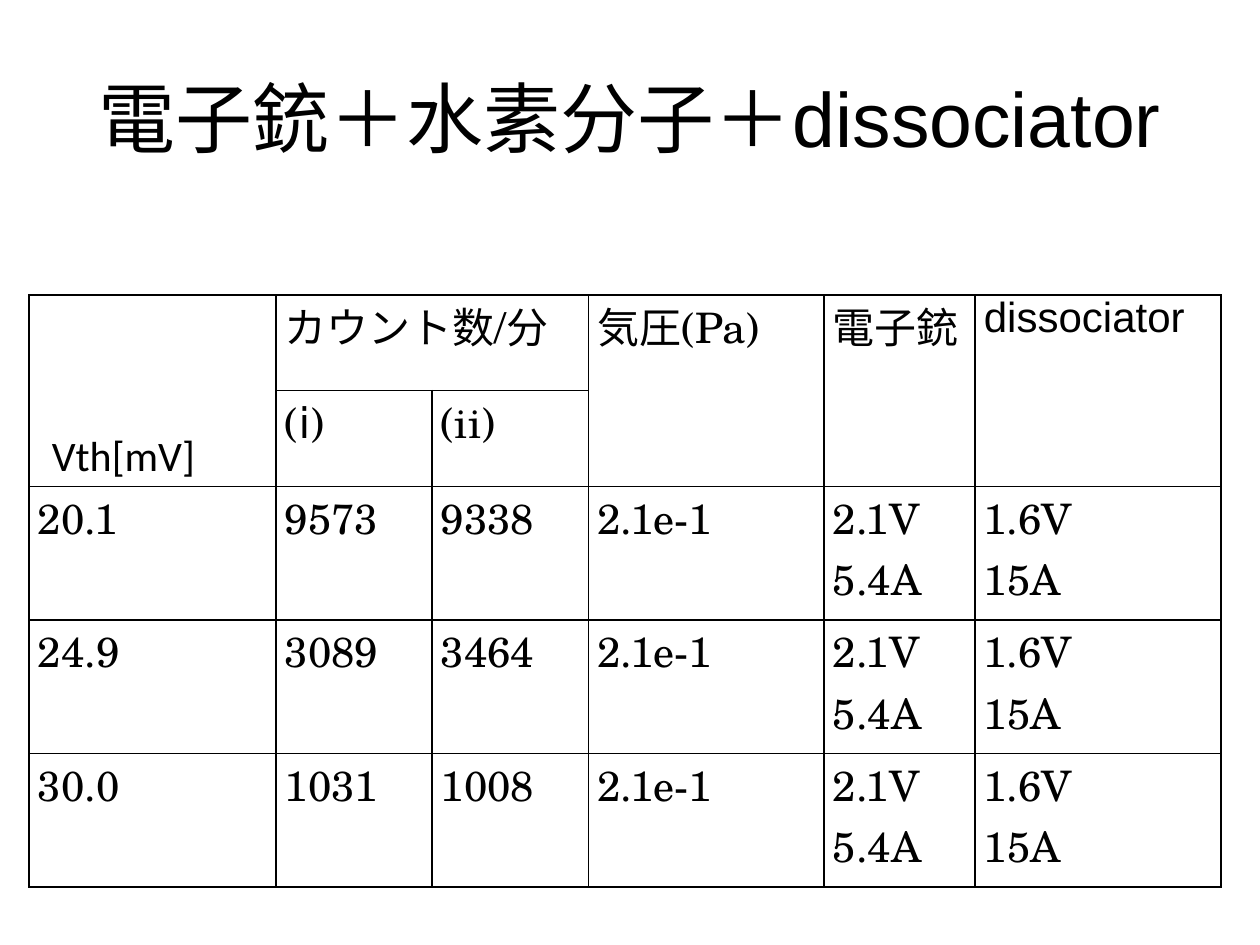
"""Build a slide tabulating count rates for the electron gun, hydrogen and dissociator."""
import lxml.etree
import pptx
import pptx.dml.color
import pptx.enum.text
import pptx.oxml.ns
import pptx.util

Inches = pptx.util.Inches
BLACK = pptx.dml.color.RGBColor(0, 0, 0)
SERIF = "TeX Gyre Schola"
COLUMN_WIDTHS = [1.96, 1.24, 1.24, 1.87, 1.2, 1.95]
ROW_HEIGHTS = [0.76, 0.76, 1.06, 1.06, 1.06]
HEADER = ["", "カウント数/分", "", "気圧(Pa)", "電子銃", "dissociator"]
SUBHEADER = ["", "(ⅰ)", "(ii)", "", "", ""]
COUNTS = [("20.1", "9573", "9338"), ("24.9", "3089", "3464"), ("30.0", "1031", "1008")]
CONDITIONS = ("2.1e-1", "2.1V\n5.4A", "1.6V\n15A")
MERGES = [(0, 0, 1, 0), (0, 1, 0, 2), (0, 3, 1, 3), (0, 4, 1, 4), (0, 5, 1, 5)]


def style_run(run, size, font_name):
    run.font.size = pptx.util.Pt(size)
    run.font.name = font_name
    run.font.color.rgb = BLACK


def add_borders(cell):
    properties = cell._tc.get_or_add_tcPr()
    for position, side in enumerate(("lnL", "lnR", "lnT", "lnB")):
        line = lxml.etree.Element(pptx.oxml.ns.qn(f"a:{side}"), w=str(pptx.util.Pt(1)))
        fill = lxml.etree.SubElement(line, pptx.oxml.ns.qn("a:solidFill"))
        lxml.etree.SubElement(fill, pptx.oxml.ns.qn("a:srgbClr"), val=str(BLACK))
        properties.insert(position, line)


presentation = pptx.Presentation()
presentation.slide_width = Inches(10)
presentation.slide_height = Inches(7.5)
slide = presentation.slides.add_slide(presentation.slide_layouts[5])

title = slide.shapes.title
title.left, title.top, title.width, title.height = map(Inches, (0.5, 0.3, 9, 1.25))
title.text_frame.vertical_anchor = pptx.enum.text.MSO_ANCHOR.MIDDLE
heading = title.text_frame.paragraphs[0]
heading.alignment = pptx.enum.text.PP_ALIGN.CENTER
for words, font_name in (("電子銃＋水素分子＋", "Arial Narrow"), ("dissociator", "Arial")):
    run = heading.add_run()
    run.text = words
    style_run(run, 44, font_name)

rows = [HEADER, SUBHEADER] + [counts + CONDITIONS for counts in COUNTS]
measurements = slide.shapes.add_table(
    len(rows), len(COLUMN_WIDTHS), Inches(0.23), Inches(2.34),
    Inches(sum(COLUMN_WIDTHS)), Inches(sum(ROW_HEIGHTS))).table
measurements.first_row = False
measurements.horz_banding = False
for column, width in zip(measurements.columns, COLUMN_WIDTHS):
    column.width = Inches(width)
for row, height in zip(measurements.rows, ROW_HEIGHTS):
    row.height = Inches(height)
for top, left, bottom, right in MERGES:
    measurements.cell(top, left).merge(measurements.cell(bottom, right))

for row_index, values in enumerate(rows):
    for column_index, value in enumerate(values):
        cell = measurements.cell(row_index, column_index)
        cell.fill.background()
        add_borders(cell)
        cell.margin_left = cell.margin_right = Inches(0.07)
        cell.margin_top = cell.margin_bottom = 0
        if not value:
            continue
        cell.text_frame.text = value
        for paragraph in cell.text_frame.paragraphs:
            paragraph.alignment = pptx.enum.text.PP_ALIGN.JUSTIFY
            style_run(paragraph.runs[0], 24, "Arial" if value == "dissociator" else SERIF)

threshold = slide.shapes.add_textbox(Inches(0.08), Inches(3.36), Inches(1.8), Inches(0.55))
threshold.text_frame.word_wrap = True
threshold.text_frame.text = "Vth[mV]"
threshold_label = threshold.text_frame.paragraphs[0]
threshold_label.alignment = pptx.enum.text.PP_ALIGN.CENTER
style_run(threshold_label.runs[0], 24, "Calibri")

presentation.save("out.pptx")
